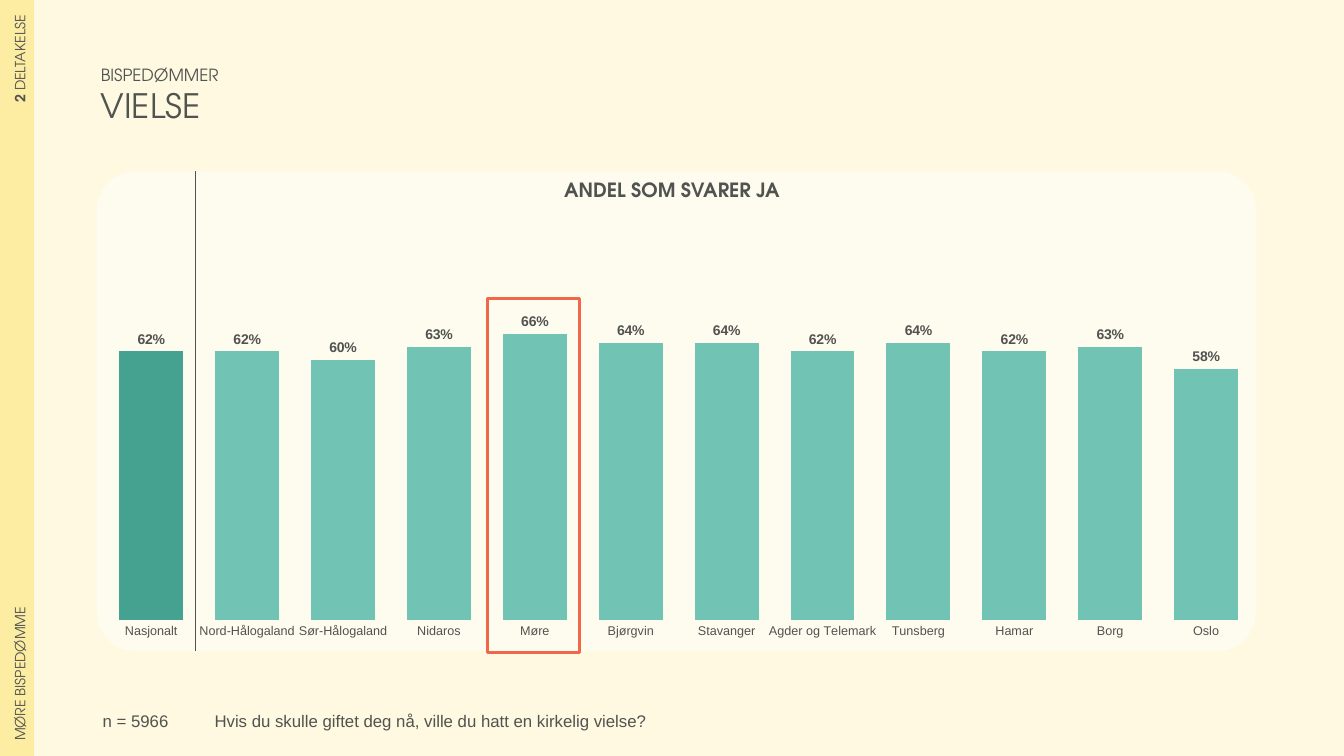
import pptx
import pptx.util
import pptx.chart.data
import pptx.dml.color
import pptx.enum.chart
import pptx.enum.shapes
import pptx.enum.text
import pptx.oxml
import pptx.oxml.ns

RGBColor = pptx.dml.color.RGBColor
BACKGROUND = RGBColor(0xFE, 0xF9, 0xE0)
SIDEBAR = RGBColor(0xFD, 0xED, 0xA2)
WHITE = RGBColor(0xFF, 0xFF, 0xFF)
TEXT = RGBColor(0x51, 0x53, 0x50)
DIOCESE = RGBColor(0x71, 0xC3, 0xB3)
NATIONAL = RGBColor(0x45, 0xA2, 0x90)
HIGHLIGHT = RGBColor(0xF2, 0x66, 0x49)

HEADING_FONT = "TeX Gyre Adventor"
BODY_FONT = "Arial"
COLUMNS, ROWS = 160, 90
UNIT = pptx.util.Inches(1) // 12
NO_STYLE = "{2D5ABB26-0587-4C30-8999-92F81FD0307C}"
ALIGN = pptx.enum.text.PP_ALIGN
SHAPE = pptx.enum.shapes.MSO_SHAPE
PANEL_TOP, PANEL_HEIGHT = 20.4, 57.12

SHARES = {
    "Nasjonalt": 0.62,
    "Nord-Hålogaland": 0.62,
    "Sør-Hålogaland": 0.60,
    "Nidaros": 0.63,
    "Møre": 0.66,
    "Bjørgvin": 0.64,
    "Stavanger": 0.64,
    "Agder og Telemark": 0.62,
    "Tunsberg": 0.64,
    "Hamar": 0.62,
    "Borg": 0.63,
    "Oslo": 0.58,
}


def style_font(font, name, size, bold=False):
    font.name = name
    font.size = pptx.util.Pt(size)
    font.bold = bold
    font.color.rgb = TEXT


def write(paragraph, text, font=HEADING_FONT, size=12, bold=False, align=ALIGN.LEFT):
    paragraph.alignment = align
    run = paragraph.add_run()
    run.text = text
    style_font(run.font, font, size, bold)


def grid(*lengths):
    return [round(length * UNIT) for length in lengths]


class DioceseSlide:
    def __init__(self, presentation):
        self.slide = presentation.slides.add_slide(presentation.slide_layouts[5])
        self.shapes = self.slide.shapes
        self.slide.background.fill.solid()
        self.slide.background.fill.fore_color.rgb = BACKGROUND

    def title(self, box, kicker, headline):
        shape = self.shapes.title
        shape.left, shape.top, shape.width, shape.height = grid(*box)
        frame = shape.text_frame
        frame.word_wrap = True
        frame.auto_size = pptx.enum.text.MSO_AUTO_SIZE.NONE
        frame.vertical_anchor = pptx.enum.text.MSO_ANCHOR.MIDDLE
        write(frame.paragraphs[0], kicker)
        write(frame.add_paragraph(), headline, size=24)
        for paragraph in frame.paragraphs:
            paragraph.space_before = pptx.util.Pt(0)
            paragraph.line_spacing = 1.0

    def text(self, box, text, **style):
        frame = self.shapes.add_textbox(*grid(*box)).text_frame
        frame.word_wrap = True
        write(frame.paragraphs[0], text, **style)

    def sidebar(self, box, entries):
        table = self.shapes.add_table(len(entries), 1, *grid(*box)).table
        table.first_row = table.horz_banding = False
        properties = table._tbl.tblPr
        properties.find(pptx.oxml.ns.qn("a:tableStyleId")).text = NO_STYLE
        for cell, (align, runs) in zip(table.iter_cells(), entries):
            cell.fill.solid()
            cell.fill.fore_color.rgb = SIDEBAR
            cell.vertical_anchor = pptx.enum.text.MSO_ANCHOR.MIDDLE
            margin = pptx.util.Inches(0.15)
            cell.margin_left = cell.margin_right = margin
            cell.margin_top = cell.margin_bottom = margin
            cell._tc.get_or_add_tcPr().set("vert", "vert270")
            for text, bold in runs:
                write(cell.text_frame.paragraphs[0], text, size=10, bold=bold, align=align)

    def panel(self, box):
        shape = self.shapes.add_shape(SHAPE.ROUNDED_RECTANGLE, *grid(*box))
        shape.shadow.inherit = False
        shape.adjustments[0] = 0.08
        shape.line.fill.background()
        shape.fill.solid()
        shape.fill.fore_color.rgb = WHITE
        color = shape._element.spPr.find(".//" + pptx.oxml.ns.qn("a:srgbClr"))
        color.append(pptx.oxml.parse_xml(
            f'<a:alpha {pptx.oxml.ns.nsdecls("a")} val="50000"/>'))

    def frame(self, box):
        shape = self.shapes.add_shape(SHAPE.RECTANGLE, *grid(*box))
        shape.shadow.inherit = False
        shape.fill.background()
        shape.line.color.rgb = HIGHLIGHT
        shape.line.width = pptx.util.Pt(2.25)

    def separator(self, column, top, bottom):
        connector = self.shapes.add_connector(
            pptx.enum.shapes.MSO_CONNECTOR.STRAIGHT, *grid(column, top, column, bottom))
        connector.line.color.rgb = TEXT
        connector.line.width = pptx.util.Pt(0.5)
        connector._element.spPr.append(pptx.oxml.parse_xml(
            f'<a:effectLst {pptx.oxml.ns.nsdecls("a")}/>'))

    def column_chart(self, box, shares, plot_area):
        data = pptx.chart.data.CategoryChartData(number_format="0%")
        data.categories = list(shares)
        data.add_series("Series 1", list(shares.values()))
        kind = pptx.enum.chart.XL_CHART_TYPE.COLUMN_CLUSTERED
        chart = self.shapes.add_chart(kind, *grid(*box), data).chart
        chart.has_title = chart.has_legend = False
        style_font(chart.font, HEADING_FONT, 10)

        values = chart.value_axis
        values.minimum_scale, values.maximum_scale = 0, 1
        values.has_major_gridlines = False
        values.visible = False
        categories = chart.category_axis
        categories.major_tick_mark = pptx.enum.chart.XL_TICK_MARK.NONE
        categories.format.line.fill.background()
        style_font(categories.tick_labels.font, BODY_FONT, 9)

        plot = chart.plots[0]
        plot.gap_width = 50
        plot.vary_by_categories = False
        series = plot.series[0]
        for part, color in ((series, DIOCESE), (series.points[0], NATIONAL)):
            part.format.fill.solid()
            part.format.fill.fore_color.rgb = color
        labels = series.data_labels
        labels.show_value = True
        labels.number_format = "0%"
        labels.number_format_is_linked = False
        labels.position = pptx.enum.chart.XL_LABEL_POSITION.OUTSIDE_END
        style_font(labels.font, BODY_FONT, 10, bold=True)

        area = chart._chartSpace.chart.plotArea
        for layout in area.findall(pptx.oxml.ns.qn("c:layout")):
            area.remove(layout)
        modes = '<c:layoutTarget val="inner"/><c:xMode val="edge"/><c:yMode val="edge"/>'
        sizes = "".join(f'<c:{key} val="{share}"/>' for key, share in zip("xywh", plot_area))
        area.insert(0, pptx.oxml.parse_xml(
            f'<c:layout {pptx.oxml.ns.nsdecls("c")}><c:manualLayout>'
            f"{modes}{sizes}</c:manualLayout></c:layout>"))


def main():
    presentation = pptx.Presentation()
    presentation.slide_width, presentation.slide_height = grid(COLUMNS, ROWS)
    page = DioceseSlide(presentation)
    page.sidebar((0, 0, 4.08, ROWS), [
        (ALIGN.RIGHT, [("2", True), (" DELTAKELSE", False)]),
        (ALIGN.LEFT, [("MØRE BISPEDØMME", False)]),
    ])
    page.title((10.8, 7.08, 126.6, 8.52), "BISPEDØMMER", "VIELSE")
    page.text((24.36, 84, 124.68, 3.24),
              "Hvis du skulle giftet deg nå, ville du hatt en kirkelig vielse?", font=BODY_FONT)
    page.text((11.04, 84, 13.32, 3.24), "n = 5966", font=BODY_FONT)
    page.panel((11.52, PANEL_TOP, 138, PANEL_HEIGHT))
    page.column_chart((11.04, PANEL_TOP, 138.96, PANEL_HEIGHT), SHARES,
                      (0.009, 0.032, 0.986, 0.903))
    page.separator(23.28, PANEL_TOP, PANEL_TOP + PANEL_HEIGHT)
    page.text((40, 20.64, 80, 4.08), "ANDEL SOM SVARER JA",
              size=14, bold=True, align=ALIGN.CENTER)
    page.frame((58.08, 35.52, 10.92, 42.12))
    presentation.save("out.pptx")


if __name__ == "__main__":
    main()
